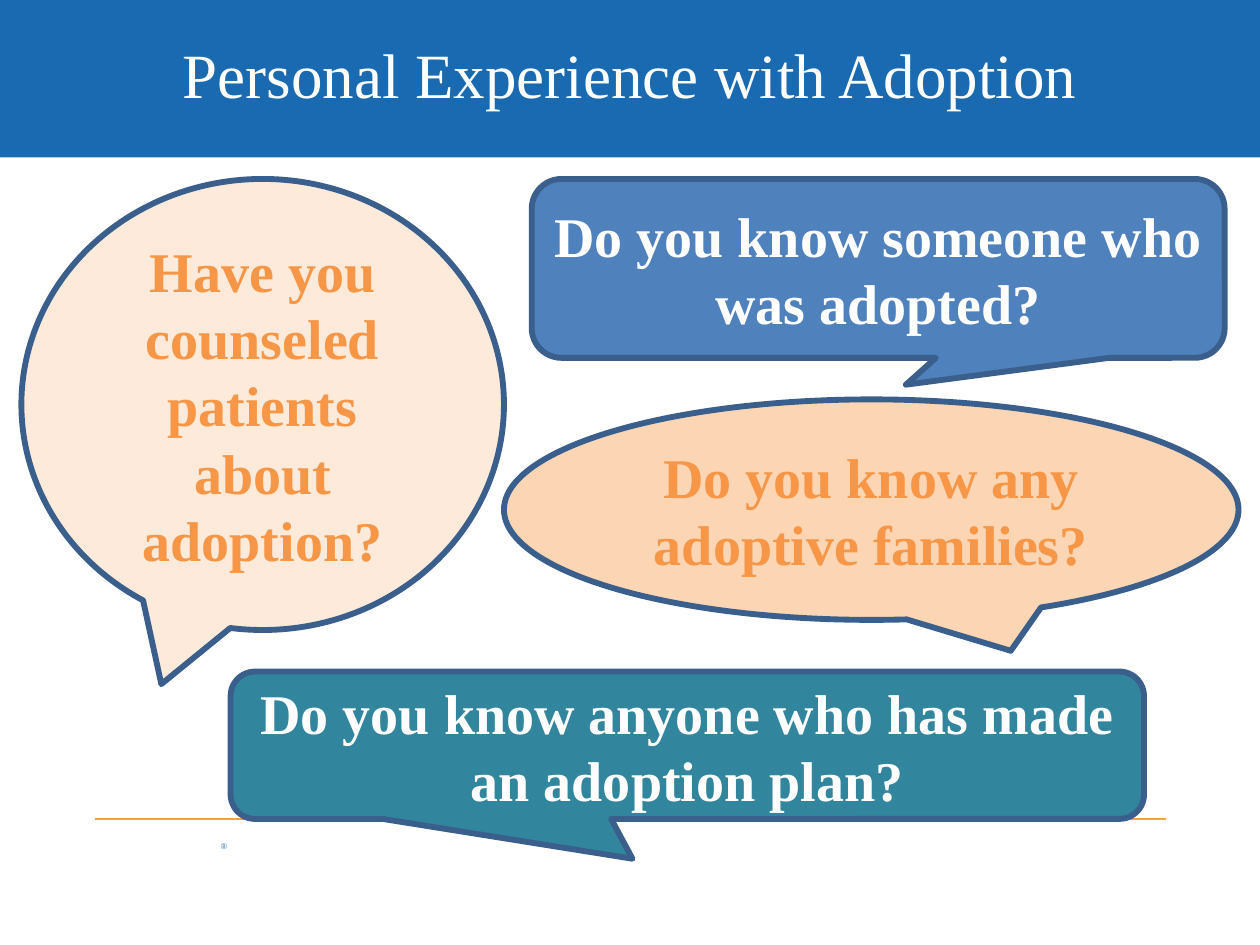
from pptx import Presentation
from pptx.dml.color import RGBColor
from pptx.enum.shapes import MSO_CONNECTOR, MSO_SHAPE
from pptx.enum.text import MSO_ANCHOR as Anchor, PP_ALIGN as Align
from pptx.oxml.ns import qn
from pptx.util import Inches, Pt

FONT = "Times New Roman"
WHITE = RGBColor(0xFF, 0xFF, 0xFF)
BANNER_BLUE = RGBColor(0x19, 0x6A, 0xB0)
RULE_GOLD = RGBColor(0xEE, 0xA3, 0x3C)
OUTLINE = RGBColor(0x3A, 0x5F, 0x8C)
BLUE = RGBColor(0x4F, 0x81, 0xBD)
TEAL = RGBColor(0x31, 0x85, 0x9C)
PEACH = RGBColor(0xFC, 0xD5, 0xB5)
PALE_PEACH = RGBColor(0xFD, 0xEA, 0xDA)
ORANGE = RGBColor(0xF7, 0x96, 0x46)

ROUNDED = MSO_SHAPE.ROUNDED_RECTANGULAR_CALLOUT
OVAL = MSO_SHAPE.OVAL_CALLOUT

# Text, shape, position, pointer adjustments, fill and text colour
QUESTIONS = [
    ("Do you know someone who was adopted?", ROUNDED,
     (4.22, 1.42, 5.5, 1.42), (0.04, 0.65), BLUE, WHITE),
    ("Do you know anyone who has made an adoption plan?", ROUNDED,
     (1.83, 5.33, 7.25, 1.17), (-0.06, 0.77), TEAL, WHITE),
    ("Do you know any adoptive families?", OVAL,
     (4, 3.17, 5.83, 1.75), (0.19, 0.64), PEACH, ORANGE),
    ("Have you counseled patients about adoption?", OVAL,
     (0.17, 1.42, 3.83, 3.58), (-0.21, 0.62), PALE_PEACH, ORANGE),
]


def inches(values):
    return [Inches(value) for value in values]


def write_text(shape, text, size, color, bold=False, align=Align.CENTER,
               anchor=Anchor.MIDDLE):
    frame = shape.text_frame
    frame.word_wrap = True
    frame.vertical_anchor = anchor
    paragraph = frame.paragraphs[0]
    paragraph.alignment = align
    run = paragraph.add_run()
    run.text = text
    run.font.name = FONT
    run.font.size = Pt(size)
    run.font.bold = bold
    run.font.color.rgb = color


def add_filled_shape(slide, kind, position, fill):
    shape = slide.shapes.add_shape(kind, *inches(position))
    shape.shadow.inherit = False
    shape.fill.solid()
    shape.fill.fore_color.rgb = fill
    return shape


def add_banner(slide):
    banner = add_filled_shape(slide, MSO_SHAPE.RECTANGLE,
                              (0, 0, 10, 1.25), BANNER_BLUE)
    banner.line.fill.background()
    # Send the banner behind the title
    slide.shapes._spTree.insert(2, banner._element)


def add_title(slide, text):
    title = slide.shapes.title
    title.left, title.top, title.width, title.height = inches((0.5, 0.08, 9, 1))
    write_text(title, text, 36, WHITE)


def add_rule(slide):
    rule = slide.shapes.add_connector(MSO_CONNECTOR.STRAIGHT,
                                      *inches((0.75, 6.5, 9.25, 6.5)))
    rule.line.color.rgb = RULE_GOLD
    rule.line.width = Pt(0.75)
    properties = rule._element.spPr
    properties.append(properties.makeelement(qn("a:effectLst"), {}))


def add_mark(slide):
    box = slide.shapes.add_textbox(*inches((1.75, 6.67, 0.25, 0.08)))
    frame = box.text_frame
    frame.margin_left = frame.margin_right = 0
    frame.margin_top = frame.margin_bottom = 0
    write_text(box, "®", 5, BANNER_BLUE, align=Align.LEFT, anchor=Anchor.TOP)


def add_callout(slide, text, kind, position, pointer, fill, color):
    callout = add_filled_shape(slide, kind, position, fill)
    for index, value in enumerate(pointer):
        callout.adjustments[index] = value
    callout.line.color.rgb = OUTLINE
    callout.line.width = Pt(3.35)
    write_text(callout, text, 32, color, bold=True)


def main():
    presentation = Presentation()
    presentation.slide_width = Inches(10)
    presentation.slide_height = Inches(7.5)
    slide = presentation.slides.add_slide(presentation.slide_layouts[5])

    # Header and footer
    add_banner(slide)
    add_title(slide, "Personal Experience with Adoption")
    add_mark(slide)
    add_rule(slide)

    # Question bubbles
    for question in QUESTIONS:
        add_callout(slide, *question)

    presentation.save("out.pptx")


if __name__ == "__main__":
    main()
